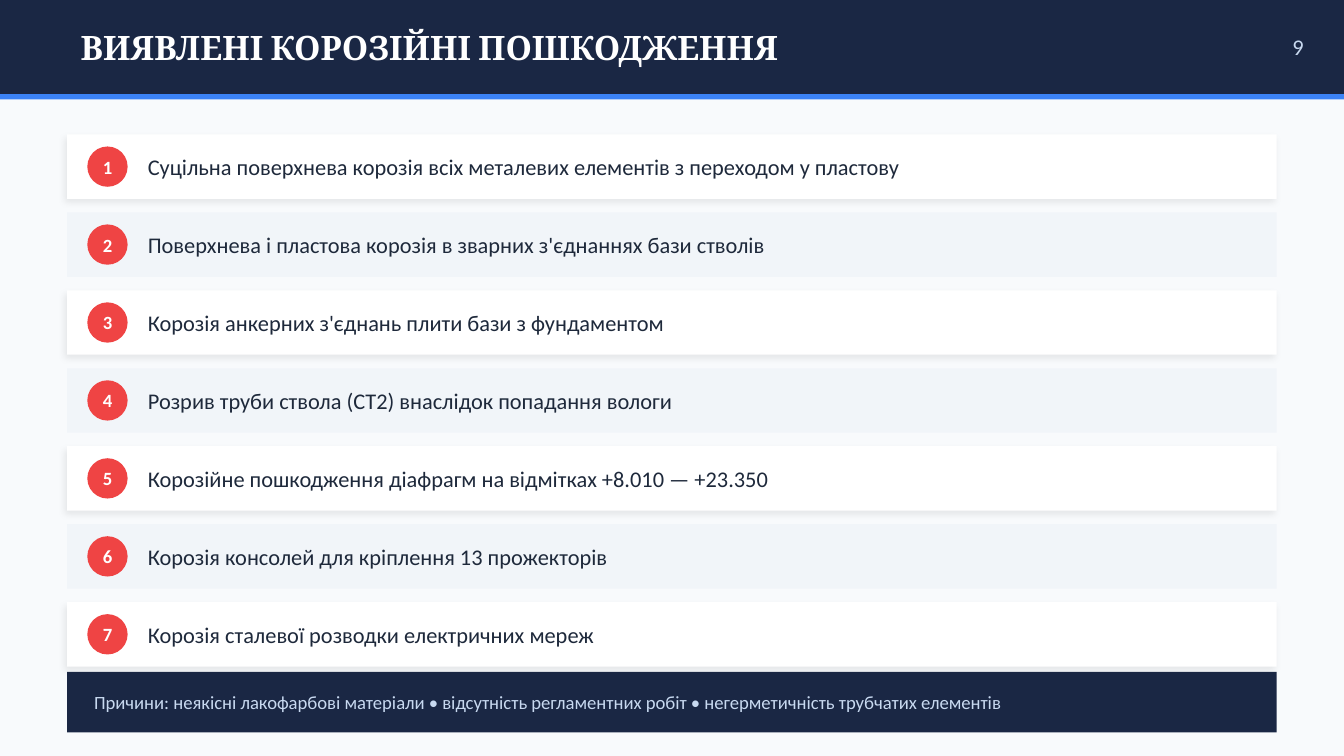
import pptx
import pptx.dml.color
import pptx.enum.shapes
import pptx.enum.text
import pptx.oxml
import pptx.oxml.ns
import pptx.util

Pt = pptx.util.Pt
RGBColor = pptx.dml.color.RGBColor
Shape = pptx.enum.shapes.MSO_SHAPE
Align = pptx.enum.text.PP_ALIGN

BACKGROUND = RGBColor(0xF8, 0xFA, 0xFC)
NAVY = RGBColor(0x1A, 0x27, 0x44)
BLUE = RGBColor(0x3B, 0x82, 0xF6)
RED = RGBColor(0xEF, 0x44, 0x44)
WHITE = RGBColor(0xFF, 0xFF, 0xFF)
STRIPE = RGBColor(0xF1, 0xF5, 0xF9)
INK = RGBColor(0x1E, 0x29, 0x3B)
PALE_BLUE = RGBColor(0xC8, 0xD9, 0xF0)

SLIDE_WIDTH = 720
MARGIN = 36
CARD_WIDTH = SLIDE_WIDTH - 2 * MARGIN
CARD_HEIGHT = 34.56
CARD_TOP = 72
CARD_PITCH = 41.76
BADGE_SIZE = 21.6

DAMAGES = [
    "Суцільна поверхнева корозія всіх металевих елементів з переходом у пластову",
    "Поверхнева і пластова корозія в зварних з'єднаннях бази стволів",
    "Корозія анкерних з'єднань плити бази з фундаментом",
    "Розрив труби ствола (СТ2) внаслідок попадання вологи",
    "Корозійне пошкодження діафрагм на відмітках +8.010 — +23.350",
    "Корозія консолей для кріплення 13 прожекторів",
    "Корозія сталевої розводки електричних мереж",
]
CAUSES = (
    "Причини: неякісні лакофарбові матеріали • відсутність регламентних робіт"
    " • негерметичність трубчатих елементів"
)


def add_filled_shape(slide, kind, left, top, width, height, color):
    shape = slide.shapes.add_shape(kind, Pt(left), Pt(top), Pt(width), Pt(height))
    shape.shadow.inherit = False
    shape.fill.solid()
    shape.fill.fore_color.rgb = color
    shape.line.fill.background()
    return shape


def add_soft_shadow(shape):
    effects = shape.element.spPr.find(pptx.oxml.ns.qn("a:effectLst"))
    effects.append(pptx.oxml.parse_xml(
        f'<a:outerShdw {pptx.oxml.ns.nsdecls("a")} blurRad="{Pt(4)}" dist="{Pt(2)}"'
        ' dir="8100000" algn="bl" rotWithShape="0">'
        '<a:srgbClr val="000000"><a:alpha val="8000"/></a:srgbClr></a:outerShdw>'
    ))


def write_text(shape, text, size, color, font="Calibri", bold=False, align=Align.LEFT):
    """Put one line of text in the shape, without insets and vertically centred."""
    frame = shape.text_frame
    frame.word_wrap = True
    frame.auto_size = pptx.enum.text.MSO_AUTO_SIZE.NONE
    frame.vertical_anchor = pptx.enum.text.MSO_ANCHOR.MIDDLE
    frame.margin_left = frame.margin_right = 0
    frame.margin_top = frame.margin_bottom = 0
    paragraph = frame.paragraphs[0]
    paragraph.alignment = align
    run = paragraph.add_run()
    run.text = text
    run.font.name = font
    run.font.size = Pt(size)
    run.font.bold = bold
    run.font.color.rgb = color


def add_text(slide, left, top, width, height, text, size, color, **style):
    box = slide.shapes.add_textbox(Pt(left), Pt(top), Pt(width), Pt(height))
    write_text(box, text, size, color, **style)


def add_header(slide, title_text, page_number):
    bar = add_filled_shape(slide, Shape.RECTANGLE, 0, 0, SLIDE_WIDTH, 50.4, NAVY)
    title = slide.shapes.title
    title.element.addprevious(bar.element)  # the bar lies behind the title
    title.left, title.top = Pt(43.2), Pt(7.2)
    title.width, title.height = Pt(612), Pt(36)
    write_text(title, title_text, 18, WHITE, font="Cambria", bold=True)
    add_text(slide, 662.4, 7.2, 36, 36, page_number, 12, PALE_BLUE, align=Align.RIGHT)
    add_filled_shape(slide, Shape.RECTANGLE, 0, 50.4, SLIDE_WIDTH, 2.88, BLUE)


def add_damage_card(slide, index, text):
    top = CARD_TOP + index * CARD_PITCH
    raised = index % 2 == 0
    card = add_filled_shape(slide, Shape.RECTANGLE, MARGIN, top, CARD_WIDTH,
                            CARD_HEIGHT, WHITE if raised else STRIPE)
    if raised:
        add_soft_shadow(card)
    badge_top = top + (CARD_HEIGHT - BADGE_SIZE) / 2
    badge = add_filled_shape(slide, Shape.OVAL, 46.8, badge_top, BADGE_SIZE,
                             BADGE_SIZE, RED)
    write_text(badge, str(index + 1), 10, WHITE, bold=True, align=Align.CENTER)
    add_text(slide, 79.2, top, 590.4, CARD_HEIGHT, text, 12, INK)


def add_causes_bar(slide):
    add_filled_shape(slide, Shape.RECTANGLE, MARGIN, 360, CARD_WIDTH, 32.4, NAVY)
    add_text(slide, 50.4, 360, 619.2, 32.4, CAUSES, 10, PALE_BLUE)


def main():
    presentation = pptx.Presentation()
    presentation.slide_width = Pt(SLIDE_WIDTH)
    presentation.slide_height = Pt(405)
    slide = presentation.slides.add_slide(presentation.slide_layouts[5])
    slide.background.fill.solid()
    slide.background.fill.fore_color.rgb = BACKGROUND
    add_header(slide, "ВИЯВЛЕНІ КОРОЗІЙНІ ПОШКОДЖЕННЯ", "9")
    for index, text in enumerate(DAMAGES):
        add_damage_card(slide, index, text)
    add_causes_bar(slide)
    presentation.save("out.pptx")


if __name__ == "__main__":
    main()
